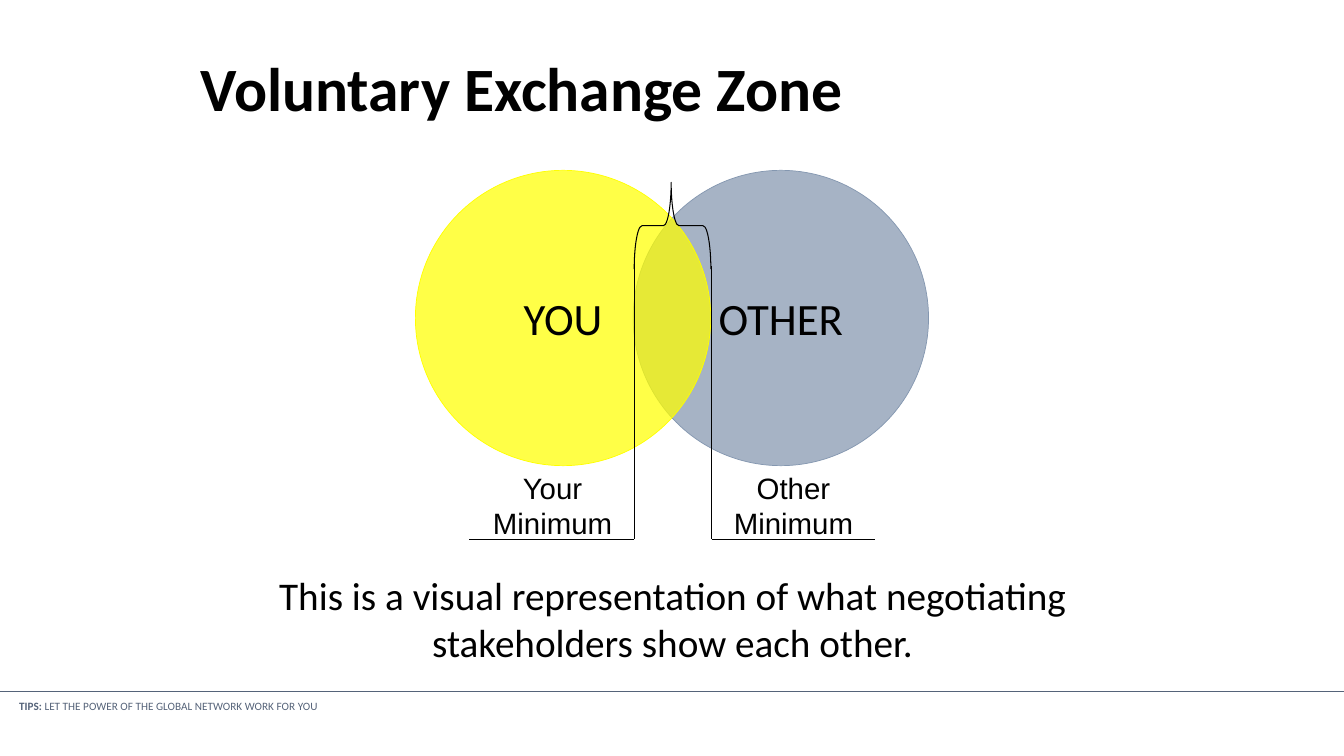
"""Build the Voluntary Exchange Zone slide."""
from lxml import etree
from pptx import Presentation
from pptx.dml.color import RGBColor
from pptx.enum.shapes import MSO_CONNECTOR, MSO_SHAPE
from pptx.enum.text import MSO_ANCHOR, PP_ALIGN
from pptx.oxml.ns import qn
from pptx.util import Pt

LINE = MSO_CONNECTOR.STRAIGHT
OVAL, BRACE = MSO_SHAPE.OVAL, MSO_SHAPE.LEFT_BRACE
TOP, MIDDLE = MSO_ANCHOR.TOP, MSO_ANCHOR.MIDDLE
LEFT, CENTER = PP_ALIGN.LEFT, PP_ALIGN.CENTER
PX = 9144

THEME = {
    "black": RGBColor(0x00, 0x00, 0x00),
    "slate": RGBColor(0x55, 0x63, 0x79),
    "blue": RGBColor(0x84, 0x97, 0xB0),
    "yellow": RGBColor(0xFF, 0xFF, 0x00),
    "body": "Calibri",
    "label": "Arial",
    "title": 44,
    "circle": 32,
    "note": 28,
    "minimum": 21,
    "footer": 8,
}

deck = Presentation()
deck.slide_width, deck.slide_height = 1333 * PX, 750 * PX
slide = deck.slides.add_slide(deck.slide_layouts[6])
shapes = slide.shapes


def write(shape, rows, size, color="black", font="body", align=CENTER, anchor=TOP, wrap=True):
    frame = shape.text_frame
    frame.word_wrap = wrap
    frame.vertical_anchor = anchor
    for i, row in enumerate(rows):
        para = frame.paragraphs[0] if i == 0 else frame.add_paragraph()
        para.alignment = align
        for text, bold in row:
            run = para.add_run()
            run.text = text
            run.font.name = THEME[font]
            run.font.size = Pt(THEME[size])
            run.font.bold = bold
            run.font.color.rgb = THEME[color]
    return frame.paragraphs[0]


def draw(x1, y1, x2, y2, color="black"):
    line = shapes.add_connector(LINE, x1 * PX, y1 * PX, x2 * PX, y2 * PX)
    line.line.color.rgb = THEME[color]
    line.line.width = Pt(0.75)
    etree.SubElement(line._element.spPr, qn("a:effectLst"))


draw(0, 686, 1333, 686, "slate")
footer = shapes.add_textbox(9 * PX, 690 * PX, 319 * PX, 22 * PX)
motto = [("TIPS: ", True), ("LET THE POWER OF THE GLOBAL NETWORK WORK FOR YOU", False)]
write(footer, [motto], "footer", "slate", align=LEFT, wrap=False).line_spacing = 0.9

title = shapes.add_textbox(189 * PX, 50 * PX, 956 * PX, 81 * PX)
heading = [("Voluntary Exchange Zone", True)]
write(title, [heading], "title", align=LEFT, anchor=MIDDLE).line_spacing = 0.9

note = shapes.add_textbox(167 * PX, 562 * PX, 1000 * PX, 96 * PX)
message = "This is a visual representation of what negotiating stakeholders show each other."
write(note, [[(message, False)]], "note").space_after = Pt(12)

for name, x, color in (("OTHER", 628, "blue"), ("YOU", 412, "yellow")):
    circle = shapes.add_shape(OVAL, x * PX, 169 * PX, 293 * PX, 293 * PX)
    circle.shadow.inherit = False
    circle.fill.solid()
    circle.fill.fore_color.rgb = THEME[color]
    tint = circle._element.spPr.find(qn("a:solidFill"))[0]
    etree.SubElement(tint, qn("a:alpha"), val="72000")
    circle.line.color.rgb = THEME[color]
    circle.line.width = Pt(0.5)
    write(circle, [[(name, False)]], "circle", anchor=MIDDLE)

brace = shapes.add_shape(BRACE, 624 * PX, 186 * PX, 86 * PX, 76 * PX)
brace.rotation = 90
brace.adjustments[0], brace.adjustments[1] = 0.102, 0.518
brace.shadow.inherit = False
brace.fill.background()
brace.line.color.rgb = THEME["black"]
brace.line.width = Pt(0.75)

for owner, edge, end, left in (("Your", 629, 465, 467), ("Other", 706, 868, 706)):
    draw(edge, 264, edge, 535)
    draw(edge, 535, end, 535)
    label = shapes.add_textbox(left * PX, 461 * PX, 162 * PX, 81 * PX)
    write(label, [[(owner, False)], [("Minimum", False)]], "minimum", font="label")

deck.save("out.pptx")
